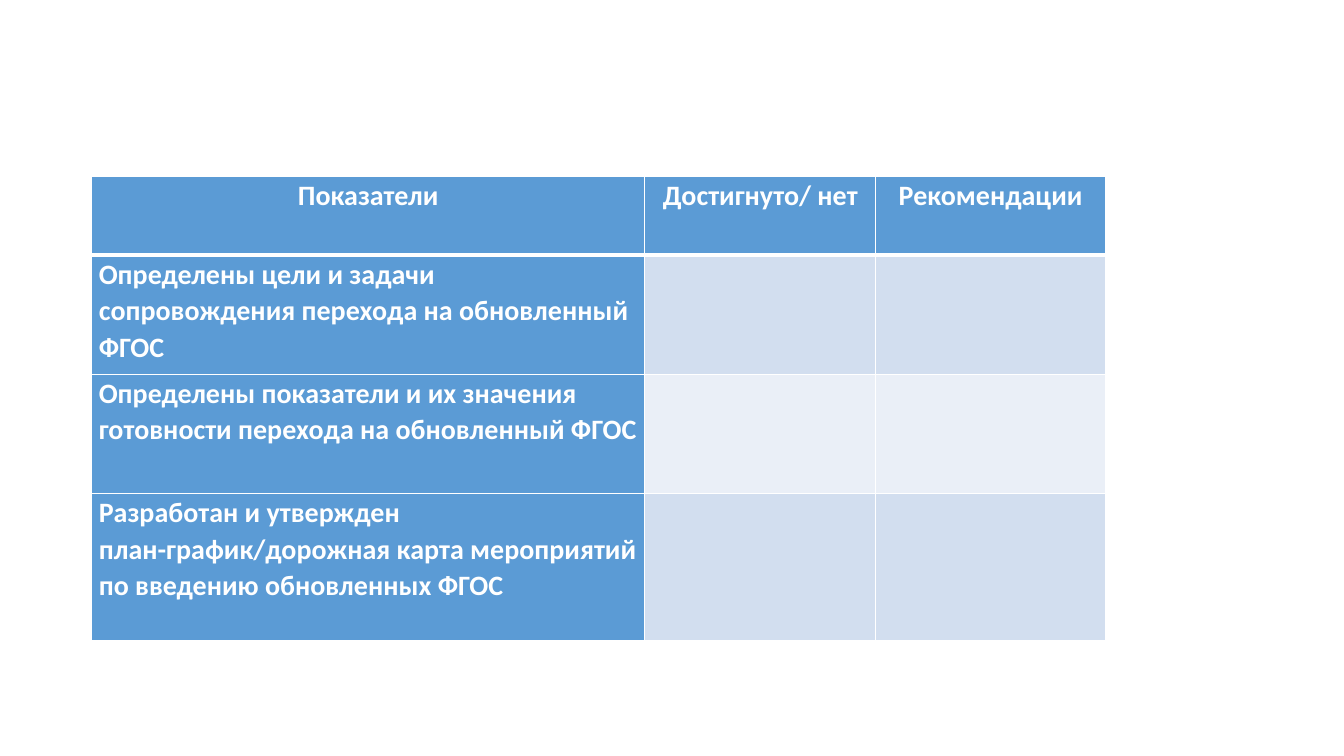
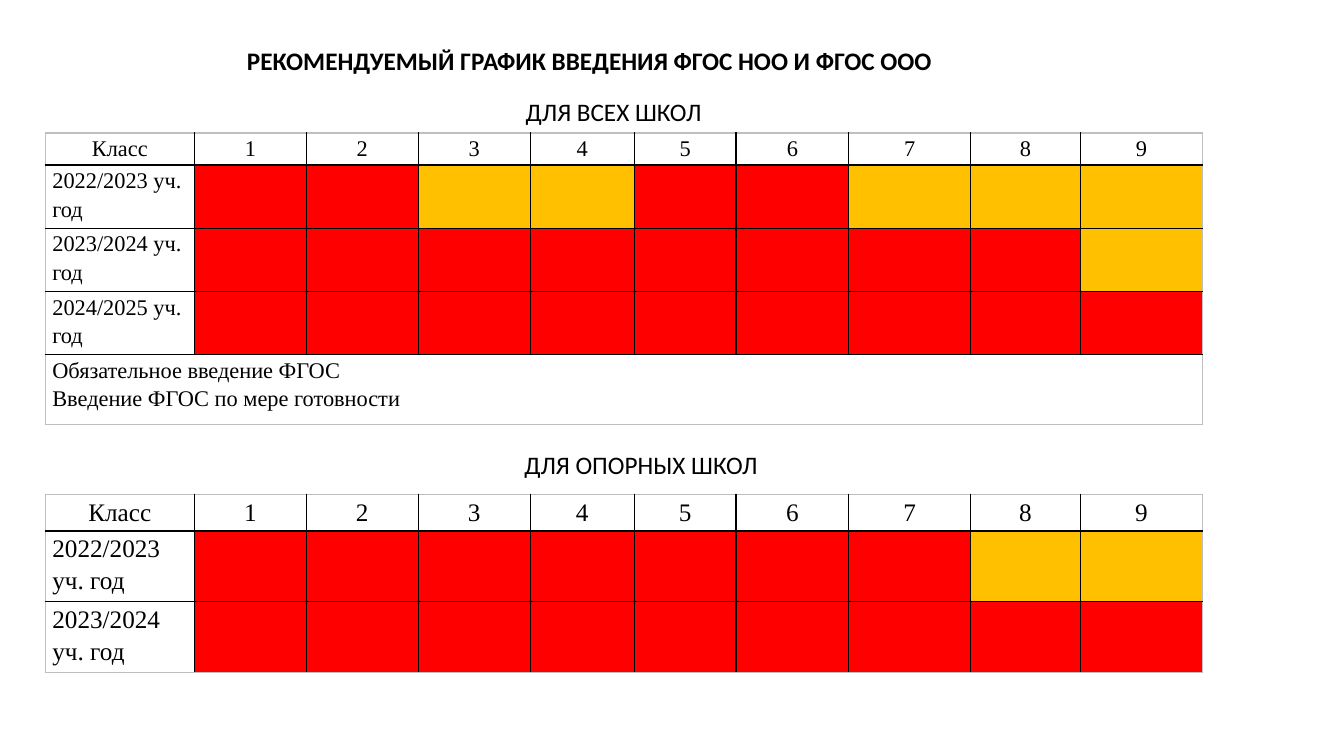
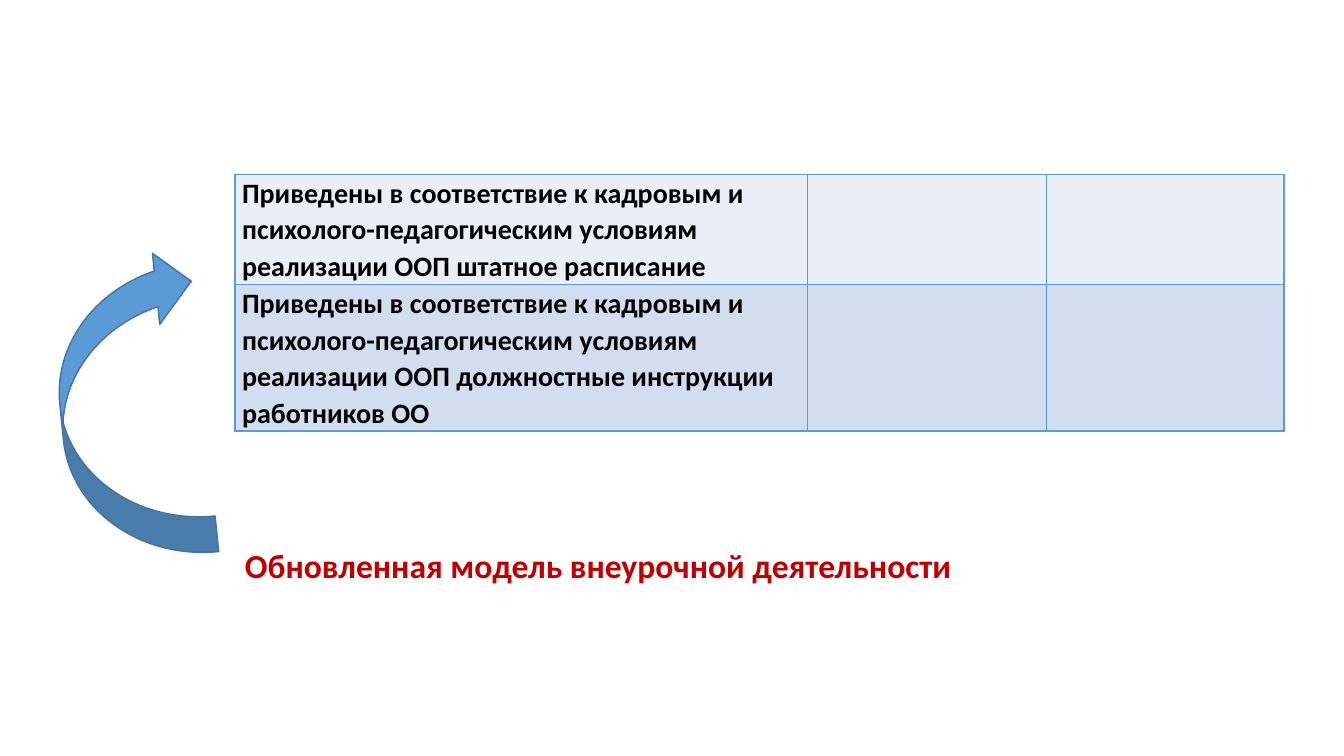
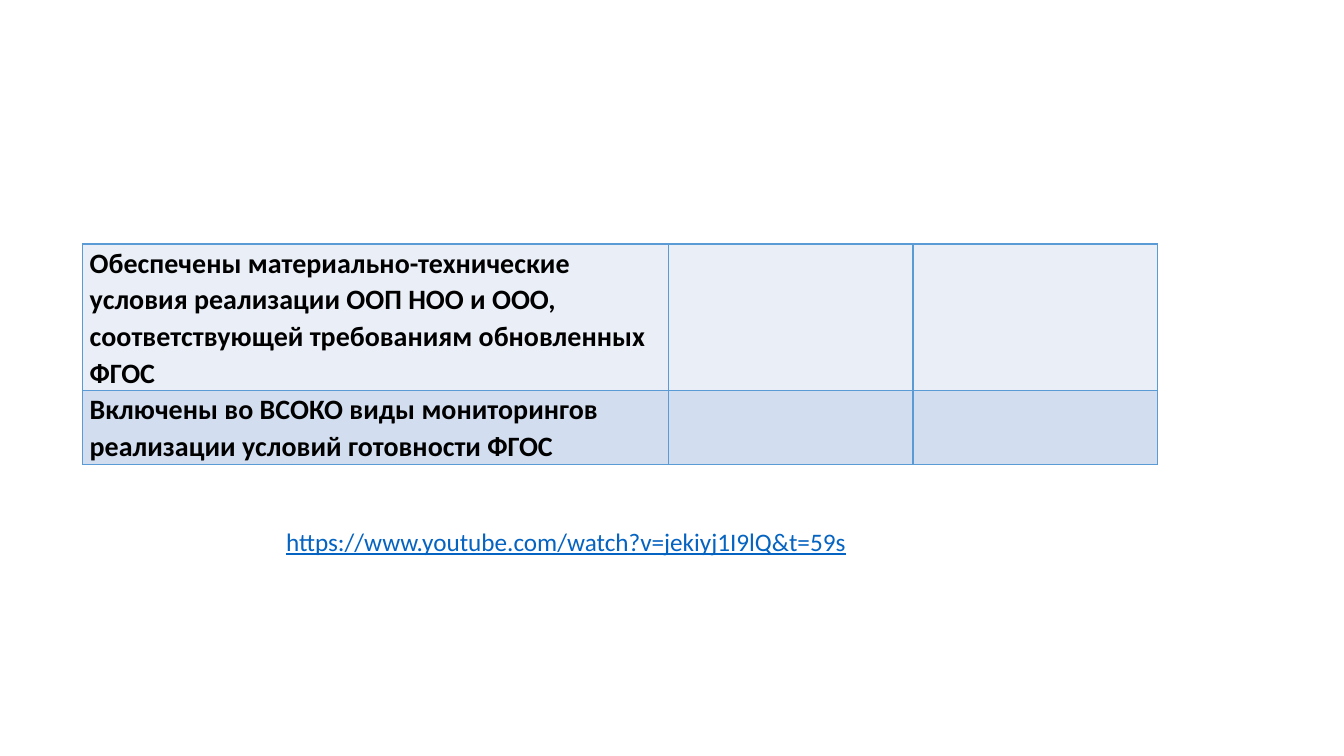
from dataclasses import dataclass

from pptx import Presentation
from pptx.dml.color import RGBColor
from pptx.enum.lang import MSO_LANGUAGE_ID
from pptx.enum.shapes import MSO_SHAPE
from pptx.enum.text import MSO_ANCHOR, MSO_AUTO_SIZE, PP_ALIGN
from pptx.oxml.xmlchemy import OxmlElement
from pptx.util import Cm, Pt

LEFT, CENTER = PP_ALIGN.LEFT, PP_ALIGN.CENTER
TOP = MSO_ANCHOR.TOP
NO_AUTOFIT = MSO_AUTO_SIZE.NONE
CURVED_ARROW = MSO_SHAPE.CURVED_LEFT_ARROW
RUSSIAN = MSO_LANGUAGE_ID.RUSSIAN
TITLE_ONLY, BLANK = 5, 6


@dataclass(frozen=True)
class Theme:
    font: str = "Calibri"
    serif: str = "Times New Roman"
    black: str = "000000"
    white: str = "FFFFFF"
    grey: str = "BFBFBF"
    blue: str = "5B9BD5"
    blue_line: str = "43739E"
    band: str = "D2DEEF"
    band_light: str = "EAEFF7"
    required: str = "FF0000"
    optional: str = "FFC000"
    accent: str = "C00000"
    link: str = "0563C1"
    small: int = 16
    body: int = 18
    cell: int = 20
    heading: int = 24


T = Theme()


class Deck:
    """Holds the presentation, its style and the current slide."""

    def __init__(self):
        self.prs = Presentation()
        self.prs.slide_width, self.prs.slide_height = Cm(33.87), Cm(19.05)
        self.s = None

    def slide(self, layout=BLANK):
        self.s = self.prs.slides.add_slide(self.prs.slide_layouts[layout])

    def fill_text(self, tf, text, align=LEFT, spacing=1.0, after=0, color=T.black,
                  **fmt):
        """Fill a text frame, one paragraph for each line of text."""
        values = {"name": T.font, "size": T.body, "bold": False,
                  "language_id": RUSSIAN, **fmt}
        values["size"] = Pt(values["size"])
        for i, line in enumerate(text.split("\n")):
            p = tf.paragraphs[0] if i == 0 else tf.add_paragraph()
            p.alignment, p.line_spacing, p.space_after = align, spacing, Pt(after)
            r = p.add_run()
            r.text = line
            for name, value in values.items():
                setattr(r.font, name, value)
            r.font.color.rgb = RGBColor.from_string(color)

    def title(self, text, box, **fmt):
        sp = self.s.shapes.title
        sp.left, sp.top, sp.width, sp.height = map(Cm, box)
        tf = sp.text_frame
        tf.auto_size, tf.vertical_anchor = NO_AUTOFIT, TOP
        self.fill_text(tf, text, bold=True, **fmt)

    def text(self, text, box, **fmt):
        tf = self.s.shapes.add_textbox(*map(Cm, box)).text_frame
        tf.word_wrap = True
        self.fill_text(tf, text, **fmt)

    def arrow(self, box, rotation):
        sp = self.s.shapes.add_shape(CURVED_ARROW, *map(Cm, box))
        sp.rotation = rotation
        sp.shadow.inherit = False
        sp.fill.solid()
        sp.fill.fore_color.rgb = RGBColor.from_string(T.blue)
        sp.line.color.rgb = RGBColor.from_string(T.blue_line)
        sp.line.width = Pt(1)

    def table(self, left, top, cols, rows):
        """Add an unstyled table with the given column and row sizes."""
        frame = self.s.shapes.add_table(len(rows), len(cols), Cm(left), Cm(top),
                                        Cm(sum(cols)), Cm(sum(rows)))
        table = frame.table
        table.first_row = table.horz_banding = False
        for items, attr, sizes in ((table.columns, "width", cols),
                                   (table.rows, "height", rows)):
            for item, size in zip(items, sizes):
                setattr(item, attr, Cm(size))
        return table

    def cell(self, cell, text="", fill=None, **fmt):
        margins = {"margin_left": 0.18, "margin_right": 0.18,
                   "margin_top": 0, "margin_bottom": 0}
        for name, value in margins.items():
            setattr(cell, name, Cm(value))
        if fill:
            cell.fill.solid()
            cell.fill.fore_color.rgb = RGBColor.from_string(fill)
        else:
            cell.fill.background()
        if text:
            self.fill_text(cell.text_frame, text, **fmt)

    def borders(self, table, inner, outer, header=1):
        """Draw all cell edges; header is the width of the line under row 0."""
        n_rows, n_cols = len(table.rows), len(table.columns)
        for i in range(n_rows):
            for j in range(n_cols):
                cell = table.cell(i, j)
                if cell.is_spanned:
                    continue
                span = cell.span_width if cell.is_merge_origin else 1
                edges = (("a:lnL", j == 0, 1),
                         ("a:lnR", j + span == n_cols, 1),
                         ("a:lnT", i == 0, header if i == 1 else 1),
                         ("a:lnB", i == n_rows - 1, header if i == 0 else 1))
                tc_pr = cell._tc.get_or_add_tcPr()
                for k, (tag, is_outer, width) in enumerate(edges):
                    ln = OxmlElement(tag)
                    ln.set("w", str(Pt(width)))
                    fill, color = OxmlElement("a:solidFill"), OxmlElement("a:srgbClr")
                    color.set("val", outer if is_outer else inner)
                    fill.append(color)
                    ln.append(fill)
                    tc_pr.insert(k, ln)

    def checklist(self, left, top, cols, rows, items, header=None):
        """Indicators in the first column, empty cells to fill in beside them."""
        table = self.table(left, top, cols, rows)
        fmt = {"size": T.cell, "bold": True, "spacing": 1.07, "after": 8}
        line, bands = T.blue, (T.band_light, T.band)
        if header:
            line, bands = T.white, (T.band, T.band_light)
            fmt["color"] = T.white
            for j, text in enumerate(header):
                self.cell(table.cell(0, j), text, T.blue, align=CENTER, **fmt)
        for i, item in enumerate(items):
            row, band = i + bool(header), bands[i % 2]
            self.cell(table.cell(row, 0), item, T.blue if header else band, **fmt)
            for j in range(1, len(cols)):
                self.cell(table.cell(row, j), fill=band)
        self.borders(table, line, line, 3 if header else 1)

    def schedule(self, top, rows, size, years, legend=""):
        """Years against grades; in a year's code R is required, O optional."""
        cols = (3.76, 2.82, 2.82, 2.82, 2.62, 2.57, 2.84, 3.07, 2.77, 3.07)
        table = self.table(1.14, top, cols, rows)
        fmt = {"name": T.serif, "size": size, "spacing": 1.15}
        fills = {"R": T.required, "O": T.optional}
        for j in range(len(cols)):
            self.cell(table.cell(0, j), str(j) if j else "Класс", align=CENTER, **fmt)
        for i, (year, code) in enumerate(years, 1):
            self.cell(table.cell(i, 0), f"{year} уч. год", **fmt)
            for j, key in enumerate(code, 1):
                self.cell(table.cell(i, j), fill=fills[key])
        if legend:
            last = len(rows) - 1
            table.cell(last, 0).merge(table.cell(last, len(cols) - 1))
            self.cell(table.cell(last, 0), legend, **fmt)
        self.borders(table, T.black, T.grey)


def main():
    d = Deck()

    # Slide 1: goals and planning indicators
    d.slide()
    d.checklist(2.31, 4.45, (13.94, 5.82, 5.79), (1.98, 3, 3, 3.71), (
        "Определены цели и задачи сопровождения перехода на обновленный ФГОС",
        "Определены показатели и их значения готовности перехода на обновленный ФГОС",
        "Разработан и утвержден план-график/дорожная карта мероприятий "
        "по введению обновленных ФГОС",
    ), header=("Показатели", "Достигнуто/ нет", "Рекомендации"))

    # Slide 2: introduction schedules
    d.slide(TITLE_ONLY)
    d.title("РЕКОМЕНДУЕМЫЙ ГРАФИК ВВЕДЕНИЯ ФГОС НОО И ФГОС ООО",
            (5.97, 1.02, 18.57, 1.02), size=T.body)
    d.text("ДЛЯ ВСЕХ ШКОЛ", (6.22, 2.31, 18.49, 1.02), align=CENTER)
    d.schedule(3.35, (0.81, 1.59, 1.59, 1.59, 1.76), T.small, (
        ("2022/2023", "RROORROOO"),
        ("2023/2024", "RRRRRRRRO"),
        ("2024/2025", "RRRRRRRRR"),
    ), legend="Обязательное введение ФГОС\nВведение ФГОС по мере готовности")
    d.text("ДЛЯ ОПОРНЫХ ШКОЛ", (7.62, 11.2, 17.07, 1.27), align=CENTER)
    d.schedule(12.47, (0.91, 1.78, 1.78), T.body, (
        ("2022/2023", "RRRRRRROO"),
        ("2023/2024", "RRRRRRRRR"),
    ))

    # Slide 3: staffing indicators
    d.slide(TITLE_ONLY)
    d.title("Обновленная модель внеурочной деятельности",
            (5.92, 13.61, 20, 1.27), size=T.heading, color=T.accent)
    d.checklist(5.92, 4.39, (14.43, 6.02, 5.99), (2.72, 3.63), (
        "Приведены в соответствие к кадровым и психолого-педагогическим условиям "
        "реализации ООП штатное расписание",
        "Приведены в соответствие к кадровым и психолого-педагогическим условиям "
        "реализации ООП должностные инструкции работников ОО",
    ))
    d.arrow((1.52, 6.35, 3.61, 7.75), 174.2)

    # Slide 4: material conditions and monitoring
    d.slide()
    d.checklist(2.08, 6.15, (14.76, 6.17, 6.15), (3.63, 1.82), (
        "Обеспечены материально-технические условия реализации ООП НОО и ООО, "
        "соответствующей требованиям обновленных ФГОС",
        "Включены во ВСОКО виды мониторингов реализации условий готовности ФГОС",
    ))
    d.text("https://www.youtube.com/watch?v=jekiyj1I9lQ&t=59s",
           (6.96, 13.13, 16.94, 1.8), color=T.link, underline=True)

    d.prs.save("out.pptx")


if __name__ == "__main__":
    main()
